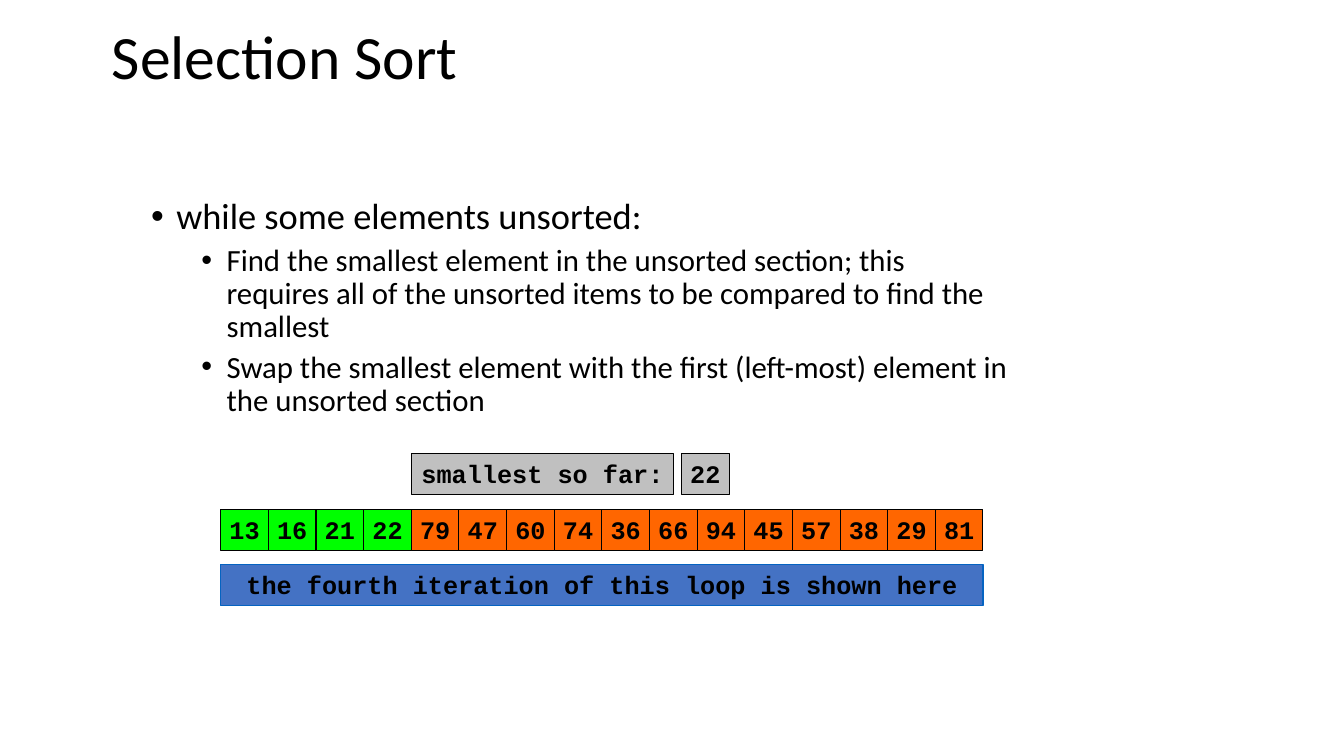
from lxml import etree
from pptx import Presentation
from pptx.dml.color import RGBColor
from pptx.enum.shapes import MSO_SHAPE
from pptx.enum.text import MSO_ANCHOR, PP_ALIGN
from pptx.oxml.ns import qn
from pptx.util import Inches, Pt

BLACK, GREEN, ORANGE = "000000", "00FF00", "FF6600"
GRAY, BLUE, LINE_BLUE = "C0C0C0", "4472C4", "0563C1"


def style_text(paragraph, font_name, size, bold=False):
    font = paragraph.font if not paragraph.runs else paragraph.runs[0].font
    font.name, font.size, font.bold = font_name, Pt(size), bold
    font.color.rgb = RGBColor.from_string(BLACK)


def add_box(text, left, top, width, fill, line=BLACK, line_width=0.75):
    """Add a filled rectangle with centred bold code-style text."""
    shape = slide.shapes.add_shape(
        MSO_SHAPE.RECTANGLE, Inches(left), Inches(top), Inches(width), Inches(0.41))
    shape.shadow.inherit = False
    shape.fill.solid()
    shape.fill.fore_color.rgb = RGBColor.from_string(fill)
    shape.line.color.rgb = RGBColor.from_string(line)
    shape.line.width = Pt(line_width)
    frame = shape.text_frame
    frame.margin_left = frame.margin_right = Inches(0.05)
    frame.margin_top = frame.margin_bottom = Inches(0.05)
    frame.vertical_anchor = MSO_ANCHOR.TOP
    frame.text = text
    frame.paragraphs[0].alignment = PP_ALIGN.CENTER
    style_text(frame.paragraphs[0], "Courier New", 18, bold=True)


presentation = Presentation()
presentation.slide_width = Inches(13.33)
presentation.slide_height = Inches(7.5)
slide = presentation.slides.add_slide(presentation.slide_layouts[5])

# Title
title = slide.shapes.title
title.left, title.top = Inches(1.01), Inches(0.13)
title.width, title.height = Inches(3.9), Inches(0.92)
title.text_frame.text = "Selection Sort"
title.text_frame.vertical_anchor = MSO_ANCHOR.MIDDLE
heading = title.text_frame.paragraphs[0]
heading.alignment = PP_ALIGN.LEFT
heading.line_spacing = 0.9
style_text(heading, "Calibri", 44)

# Algorithm steps: level, size, space before, text
steps = [
    (0, 26, 0, "while some elements unsorted:"),
    (1, 22, 5, "Find the smallest element in the unsorted section; this requires "
               "all of the unsorted items to be compared to find the smallest"),
    (1, 22, 5, "Swap the smallest element with the first (left-most) element "
               "in the unsorted section"),
]
body = slide.shapes.add_textbox(Inches(1.4), Inches(1.92), Inches(8.75), Inches(2.72))
body.text_frame.word_wrap = True
for index, (level, size, space_before, text) in enumerate(steps):
    paragraph = body.text_frame.paragraphs[0] if index == 0 else body.text_frame.add_paragraph()
    paragraph.text = text
    paragraph.level = level
    paragraph.line_spacing = 0.9
    paragraph.space_before = Pt(space_before)
    properties = paragraph._p.get_or_add_pPr()
    properties.set("marL", str(Inches(0.25 + 0.5 * level)))
    properties.set("indent", str(Inches(-0.25)))
    etree.SubElement(properties, qn("a:buFont")).set("typeface", "Arial")
    etree.SubElement(properties, qn("a:buChar")).set("char", "•")
    style_text(paragraph, "Calibri", size)

# Array with its sorted section first
values = [13, 16, 21, 22, 79, 47, 60, 74, 36, 66, 94, 45, 57, 38, 29, 81]
sorted_count = 4
array_left, array_width = 2.19, 7.56
cell_width = array_width / len(values)
for index, value in enumerate(values):
    add_box(str(value), array_left + index * cell_width, 5.05, cell_width,
            GREEN if index < sorted_count else ORANGE)

# Caption and smallest value
add_box("the fourth iteration of this loop is shown here",
        array_left, 5.6, array_width, BLUE, LINE_BLUE, 1)
add_box("smallest so far:", 4.08, 4.5, 2.6, GRAY)
add_box("22", 6.76, 4.5, cell_width, GRAY)

presentation.save("out.pptx")
